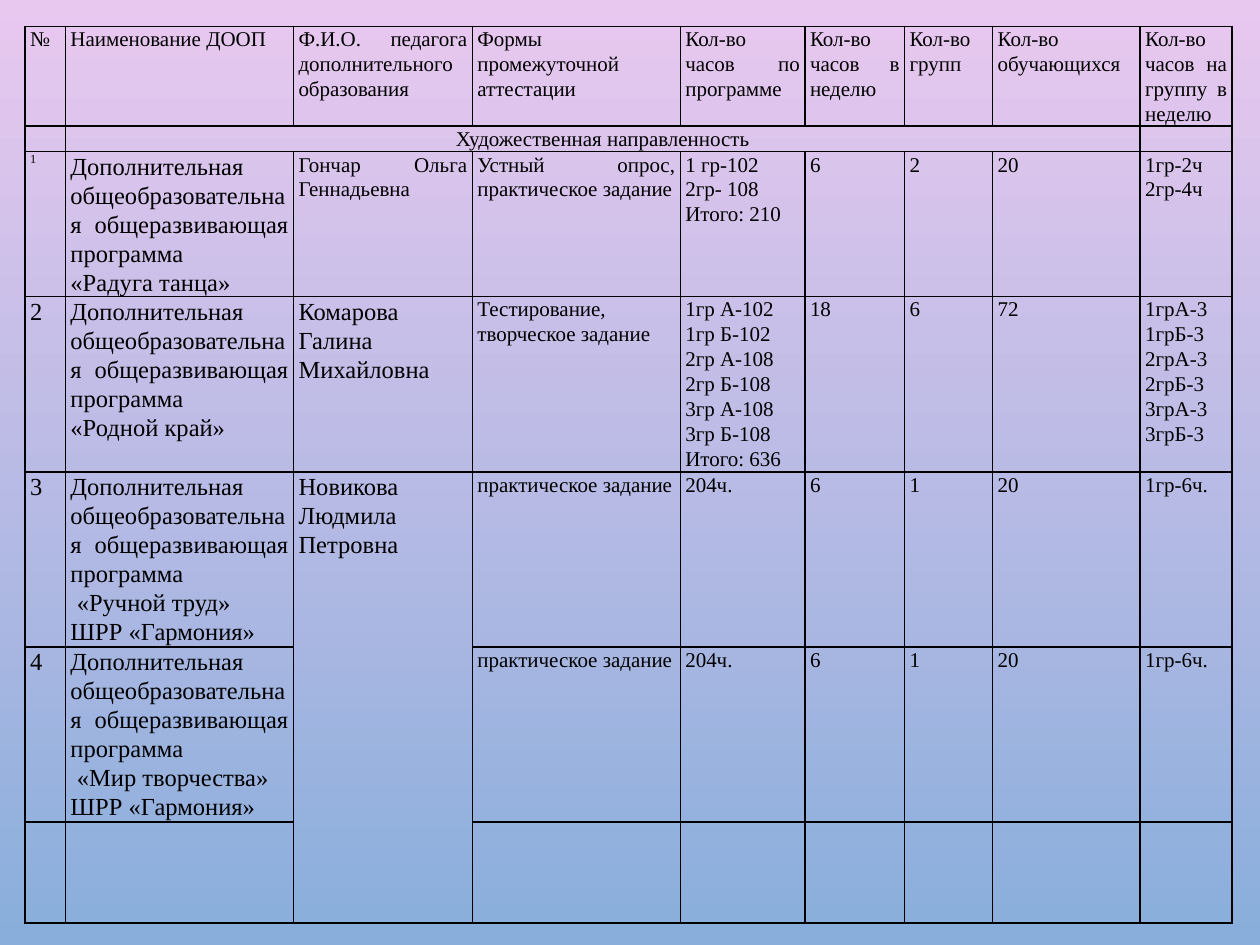
from lxml.etree import SubElement
from pptx import Presentation
from pptx.dml.color import RGBColor
from pptx.enum.text import PP_ALIGN
from pptx.oxml.ns import qn
from pptx.util import Inches, Pt

FONT = "Times New Roman"
INK = "000000"
BACKGROUND = ("E9C8EF", "89AEDB")
LEFT, TOP = 0.2, 0.21
COL_WIDTHS = [0.32, 1.81, 1.42, 1.65, 0.99, 0.79, 0.7, 1.17, 0.73]
ROW_HEIGHTS = [0.79, 0.19, 1.15, 1.39, 1.39, 1.39, 0.8]
PROGRAM = "Дополнительная общеобразовательная общеразвивающая программа"
CENTER = "Гармония"

# One list per row; a line break separates paragraphs.
ROWS = [
    ["№", "Наименование ДООП", "Ф.И.О. педагога дополнительного образования",
     "Формы промежуточной аттестации", "Кол-во часов по программе",
     "Кол-во часов в неделю", "Кол-во групп", "Кол-во обучающихся",
     "Кол-во часов на группу в неделю"],
    ["", "Художественная направленность"],
    ["1", f"{PROGRAM}\n«Радуга танца»", "Гончар Ольга Геннадьевна",
     "Устный опрос, практическое задание", "1 гр-102\n2гр- 108\nИтого: 210",
     "6", "2", "20", "1гр-2ч\n2гр-4ч"],
    ["2", f"{PROGRAM}\n«Родной край»", "Комарова Галина Михайловна",
     "Тестирование, творческое задание",
     "1гр А-102\n1гр Б-102\n2гр А-108\n2гр Б-108\n3гр А-108\n3гр Б-108\nИтого: 636",
     "18", "6", "72", "1грА-3\n1грБ-3\n2грА-3\n2грБ-3\n3грА-3\n3грБ-3"],
    ["3", f"{PROGRAM}\n«Ручной труд»\nШРР «{CENTER}»", "Новикова Людмила Петровна",
     "практическое задание", "204ч.", "6", "1", "20", "1гр-6ч."],
    ["4", f"{PROGRAM}\n«Мир творчества»\nШРР «{CENTER}»", "",
     "практическое задание", "204ч.", "6", "1", "20", "1гр-6ч."],
    [],
]
MERGES = [((1, 1), (1, 7)), ((4, 2), (6, 2))]
SECTION_ROW = 1
INDENTED_TITLES = ("«Ручной труд»", "«Мир творчества»")


def rgb(value):
    return RGBColor.from_string(value)


def font_size(row, col):
    if (row, col) == (2, 0):
        return 7
    large = row >= 2 and col < 3 and (row, col) != (2, 2)
    return 14 if large else 12


def add_borders(cell):
    tc_pr = cell._tc.get_or_add_tcPr()
    for side in ("a:lnL", "a:lnR", "a:lnT", "a:lnB"):
        ln = SubElement(tc_pr, qn(side), w=str(Pt(1)))
        fill = SubElement(ln, qn("a:solidFill"))
        SubElement(fill, qn("a:srgbClr"), val=INK)


def fill_cell(cell, text, size, align):
    cell.margin_left = cell.margin_right = Inches(0.04)
    cell.margin_top = cell.margin_bottom = 0
    add_borders(cell)
    cell.fill.background()
    tf = cell.text_frame
    tf.text = text
    for p in tf.paragraphs:
        p.alignment = align
        p.line_spacing = 1.07
        if p.text in INDENTED_TITLES:
            p._p.get_or_add_pPr().set("indent", str(Inches(0.05)))
        if not p.runs:
            SubElement(p._p, qn("a:endParaRPr"), sz=str(size * 100))
        for r in p.runs:
            r.font.name = FONT
            r.font.size = Pt(size)
            r.font.color.rgb = rgb(INK)


prs = Presentation()
prs.slide_width, prs.slide_height = Inches(10), Inches(7.5)
s = prs.slides.add_slide(prs.slide_layouts[6])

bg = s.background.fill
bg.gradient()
bg.gradient_angle = 270
for stop, color in zip(bg.gradient_stops, BACKGROUND):
    stop.color.rgb = rgb(color)

table = s.shapes.add_table(
    len(ROW_HEIGHTS), len(COL_WIDTHS), Inches(LEFT), Inches(TOP),
    Inches(sum(COL_WIDTHS)), Inches(sum(ROW_HEIGHTS))).table
table.first_row = table.horz_banding = False
for column, width in zip(table.columns, COL_WIDTHS):
    column.width = Inches(width)
for row, height in zip(table.rows, ROW_HEIGHTS):
    row.height = Inches(height)

for i, texts in enumerate(ROWS):
    align = PP_ALIGN.CENTER if i == SECTION_ROW else PP_ALIGN.JUSTIFY
    for j in range(len(COL_WIDTHS)):
        text = texts[j] if j < len(texts) else ""
        fill_cell(table.cell(i, j), text, font_size(i, j), align)
for first, last in MERGES:
    table.cell(*first).merge(table.cell(*last))

prs.save("out.pptx")
